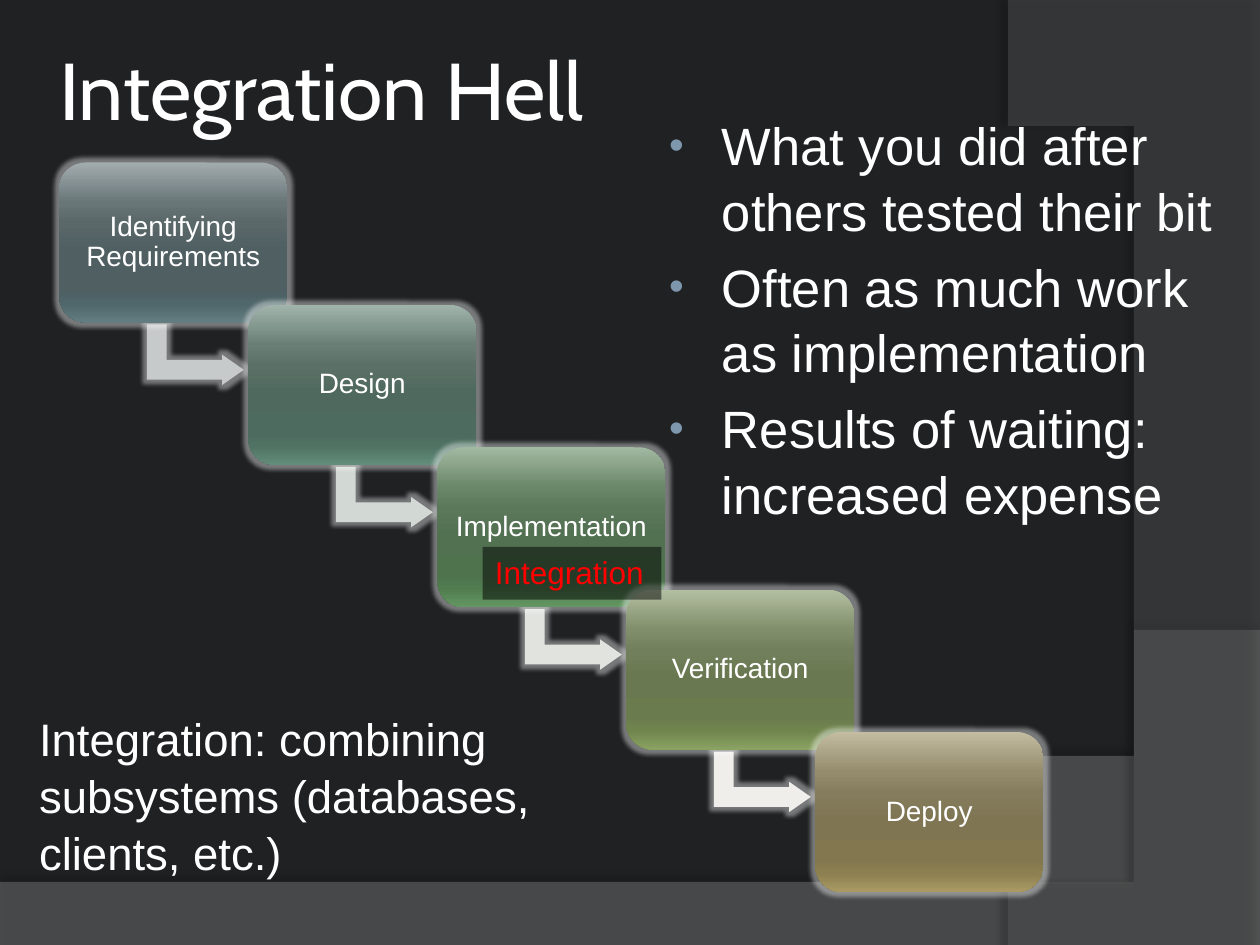
from lxml import etree
from pptx import Presentation
from pptx.dml.color import RGBColor
from pptx.enum.shapes import MSO_SHAPE
from pptx.enum.text import MSO_ANCHOR, MSO_AUTO_SIZE, PP_ALIGN
from pptx.oxml import parse_xml
from pptx.oxml.ns import nsdecls, qn
from pptx.util import Inches, Pt

LEFT, CENTER = PP_ALIGN.LEFT, PP_ALIGN.CENTER
TOP, MIDDLE = MSO_ANCHOR.TOP, MSO_ANCHOR.MIDDLE

# Content
TITLE = "Integration Hell"
POINTS = [
    "What you did after others tested their bit",
    "Often as much work as implementation",
    "Results of waiting: increased expense",
]
DEFINITION = "Integration: combining subsystems (databases, clients, etc.)"
BADGE = "Integration"
STOPS = [0, 25, 38, 55, 80, 88, 100]
# Each step: label, gradient colours, colour of the arrow to the next step
STEPS = [
    ("Identifying Requirements", "A2ACAF 687678 5A686A 4F5F62 4D6063 4F666A 637D81", "C7CACB"),
    ("Design", "A1B4AB 697F75 5B7167 50695E 4D6B5E 4F7263 638C7A", "D2D8D4"),
    ("Implementation", "A2B9A1 6B876A 5C785B 527151 4E734D 507C4F 649762", "E1E4DE"),
    ("Verification", "B3BFA1 818E6B 717F5C 6A7851 6A7B4D 70854E 8AA262", "F0EEEB"),
    ("Deploy", "C4BCA1 948C6D 847C5D 7F7553 82774E 8C7F50 AA9B64", None),
]
COLORS = {"background": "1F2123", "floor": "7F7F7F", "side": "5E5E5E", "text": "FFFFFF",
          "bullet": "7E97AD", "badge": "000000", "alert": "FF0000", "glow": "FFFFFF"}

# Layout
STEP_X, STEP_Y = 1.5, 1.13
BOX = (0.47, 1.29, 1.81, 1.27)
ARROW = (1.31, 2.43, 0.48, 0.77)
ARROW_ADJUSTMENTS = (0.328, 0.25, 0.358)


def rgb(value):
    return RGBColor.from_string(value)


def place(shape, box):
    for name, value in zip(("left", "top", "width", "height"), box):
        setattr(shape, name, Inches(value))


def paint(shape, color, opacity=100):
    shape.shadow.inherit = False
    shape.line.fill.background()
    shape.fill.solid()
    shape.fill.fore_color.rgb = rgb(color)
    if opacity < 100:
        tint = shape.fill._xPr.find(".//" + qn("a:srgbClr"))
        etree.SubElement(tint, qn("a:alpha"), val=str(opacity * 1000))


def add_effect(shape, tag, color, opacity, **settings):
    effects = shape.element.spPr.find(qn("a:effectLst"))
    effect = etree.SubElement(effects, qn(tag), **settings)
    tint = etree.SubElement(effect, qn("a:srgbClr"), val=color)
    etree.SubElement(tint, qn("a:alpha"), val=str(opacity * 1000))


def add_glow(shape):
    add_effect(shape, "a:glow", COLORS["glow"], 40, rad=str(Pt(5)))


def fill_gradient(shape, colors):
    stops = "".join(f'<a:gs pos="{stop * 1000}"><a:srgbClr val="{color}"/></a:gs>'
                    for stop, color in zip(STOPS, colors))
    gradient = parse_xml(f'<a:gradFill {nsdecls("a")} rotWithShape="1"><a:gsLst>{stops}</a:gsLst>'
                         '<a:lin ang="5400000" scaled="0"/></a:gradFill>')
    solid = shape.element.spPr.find(qn("a:solidFill"))
    solid.getparent().replace(solid, gradient)


def write(shape, texts, size, color="text", font="Arial", align=LEFT, anchor=TOP,
          margins=(0.1, 0.05), spacing=1.0, before=0):
    frame = shape.text_frame
    across, down = map(Inches, margins)
    frame_format = {"word_wrap": True, "auto_size": MSO_AUTO_SIZE.NONE, "vertical_anchor": anchor,
                    "margin_left": across, "margin_right": across,
                    "margin_top": down, "margin_bottom": down}
    for name, value in frame_format.items():
        setattr(frame, name, value)
    for index, text in enumerate(texts):
        para = frame.paragraphs[0] if index == 0 else frame.add_paragraph()
        para_format = {"alignment": align, "line_spacing": spacing,
                       "space_before": Pt(before), "space_after": Pt(0)}
        for name, value in para_format.items():
            setattr(para, name, value)
        span = para.add_run()
        span.text = text
        span.font.name, span.font.size = font, Pt(size)
        span.font.color.rgb = rgb(COLORS[color])


def add_bullet(para):
    props = para._p.get_or_add_pPr()
    props.set("marL", str(Inches(0.46)))
    props.set("indent", str(Inches(-0.42)))
    bullet_color = etree.SubElement(props, qn("a:buClr"))
    etree.SubElement(bullet_color, qn("a:srgbClr"), val=COLORS["bullet"])
    etree.SubElement(props, qn("a:buSzPct"), val="80000")
    etree.SubElement(props, qn("a:buFont"), typeface="Arial")
    etree.SubElement(props, qn("a:buChar"), char="•")


def curve(points, count=60):
    """Points along a cubic curve, without its start."""
    for step in range(1, count + 1):
        t = step / count
        weights = ((1 - t) ** 3, 3 * t * (1 - t) ** 2, 3 * t * t * (1 - t), t ** 3)
        yield tuple(sum(w * p[axis] for w, p in zip(weights, points)) for axis in (0, 1))


deck = Presentation()
deck.slide_width, deck.slide_height = Inches(10), Inches(7.5)
page = deck.slides.add_slide(deck.slide_layouts[1])
page.background.fill.solid()
page.background.fill.fore_color.rgb = rgb(COLORS["background"])
shapes = page.shapes

# Curved backdrop, kept behind the placeholders
floor = [(0, 7.05), (0, 7.5), (10, 7.5), (10, 5.2),
         *curve([(10, 5.2), (5.59, 7.29), (3.91, 7.19), (0, 7.05)])]
side = [(10, 0.02), (10, 7.5), (8.21, 7.5),
        *curve([(8.21, 7.5), (9.35, 6.19), (10.18, 3), (8, 0)])]
backdrop = [(floor, "floor", 45, 35, 3.5, 270), (side, "side", 40, 45, 4, 180)]
for depth, (points, color, opacity, shade, distance, angle) in enumerate(backdrop):
    builder = shapes.build_freeform(*points[0], scale=Inches(1))
    builder.add_line_segments(points[1:], close=True)
    panel = builder.convert_to_shape()
    paint(panel, COLORS[color], opacity)
    add_effect(panel, "a:outerShdw", "000000", shade, blurRad=str(Pt(4)),
               dist=str(Pt(distance)), dir=str(angle * 60000))
    shapes._spTree.insert(2 + depth, panel.element)

# Title and bullet list
title, body = page.placeholders
place(title, (0.42, 0.08, 8.17, 1.25))
write(title, [TITLE], 46, font="Cabin", anchor=MIDDLE, margins=(0.05, 0.05))
place(body, (5.17, 0.83, 4.58, 3.3))
write(body, POINTS, 30, spacing=1.04, before=6)
for para in body.text_frame.paragraphs:
    add_bullet(para)

# Staircase of steps
for index, (label, colors, arrow_color) in enumerate(STEPS):
    shift_x, shift_y = index * STEP_X, index * STEP_Y
    if arrow_color:
        left, top, width, height = ARROW
        arrow = shapes.add_shape(MSO_SHAPE.BENT_UP_ARROW, 0, 0, 0, 0)
        place(arrow, (left + shift_x, top + shift_y, width, height))
        arrow.rotation = 90
        for position, value in enumerate(ARROW_ADJUSTMENTS):
            arrow.adjustments[position] = value
        paint(arrow, arrow_color)
        add_glow(arrow)
    left, top, width, height = BOX
    box = shapes.add_shape(MSO_SHAPE.ROUNDED_RECTANGLE, 0, 0, 0, 0)
    place(box, (left + shift_x, top + shift_y, width, height))
    paint(box, COLORS["background"])
    fill_gradient(box, colors.split())
    add_glow(box)
    write(box, [label], 16, align=CENTER, anchor=MIDDLE, margins=(0.07, 0.07), spacing=0.9)

# Badge on the implementation step
badge = shapes.add_shape(MSO_SHAPE.RECTANGLE, 0, 0, 0, 0)
place(badge, (3.83, 4.34, 1.42, 0.42))
paint(badge, COLORS["badge"], 50)
write(badge, [BADGE], 18, color="alert")

# Definition
note = shapes.add_textbox(0, 0, 0, 0)
place(note, (0.17, 5.58, 4.5, 1.53))
write(note, [DEFINITION], 26, margins=(0.14, 0.05), spacing=1.04, before=5)

deck.save("out.pptx")
